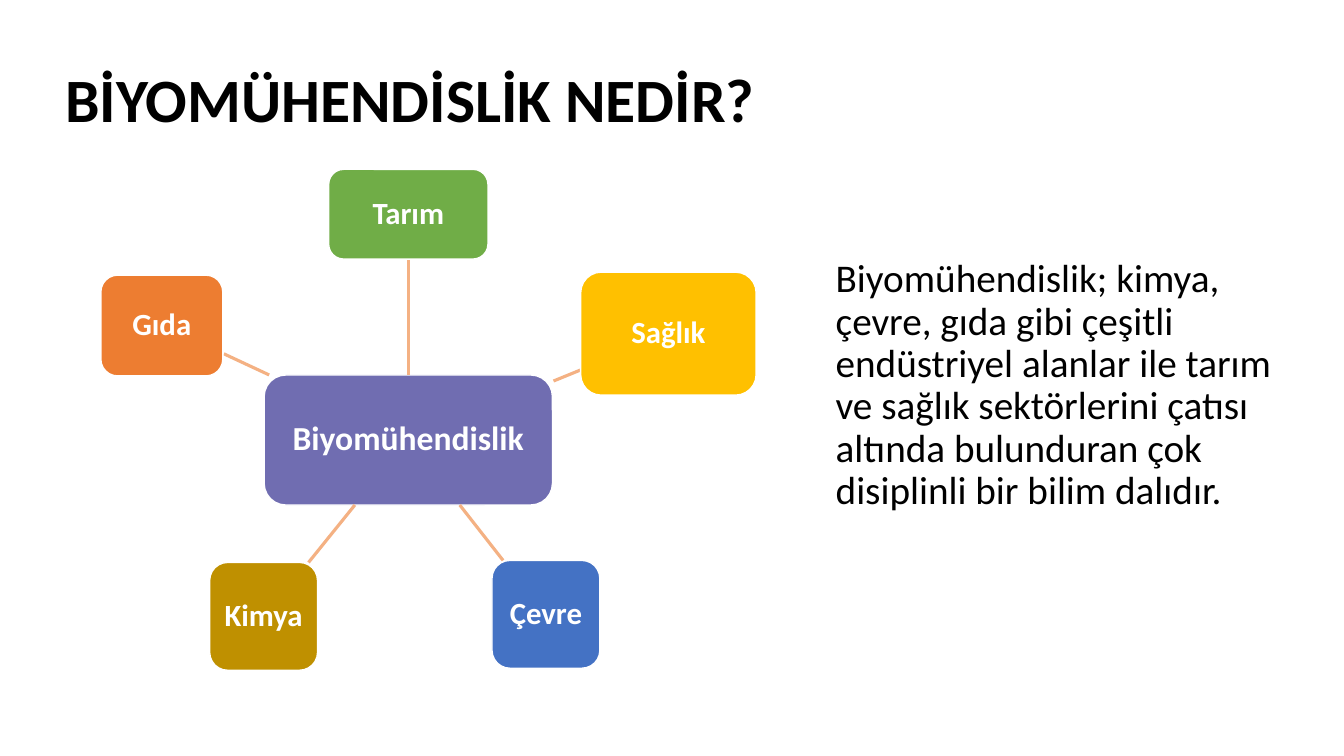
import pptx
import pptx.dml.color
import pptx.enum.shapes
import pptx.enum.text
import pptx.oxml.ns
import pptx.util
from lxml import etree

Inches = pptx.util.Inches
Pt = pptx.util.Pt


def color(hex_string):
    return pptx.dml.color.RGBColor.from_string(hex_string)


class Diagram:
    """Holds the style and the slide being drawn."""
    font = "Calibri"
    ink = "000000"
    paper = "FFFFFF"
    spoke_color = "F4B183"

    def __init__(self, slide):
        self.slide = slide

    def set_text(self, frame, text, size, ink, bold, align, anchor):
        frame.word_wrap = True
        frame.vertical_anchor = anchor
        paragraph = frame.paragraphs[0]
        paragraph.text = text
        paragraph.alignment = align
        paragraph.line_spacing = 0.9
        paragraph.font.name = self.font
        paragraph.font.size = Pt(size)
        paragraph.font.bold = bold
        paragraph.font.color.rgb = color(ink)

    def text(self, box, text, size, bold, anchor):
        frame = self.slide.shapes.add_textbox(*map(Inches, box)).text_frame
        self.set_text(frame, text, size, self.ink, bold,
                      pptx.enum.text.PP_ALIGN.LEFT, anchor)

    def node(self, box, text, size, fill):
        node = self.slide.shapes.add_shape(
            pptx.enum.shapes.MSO_SHAPE.ROUNDED_RECTANGLE, *map(Inches, box))
        node.shadow.inherit = False
        node.fill.solid()
        node.fill.fore_color.rgb = color(fill)
        node.line.color.rgb = color(self.paper)
        node.line.width = Pt(1)
        frame = node.text_frame
        frame.margin_left = frame.margin_right = Inches(0.06)
        frame.margin_top = frame.margin_bottom = Inches(0.06)
        self.set_text(frame, text, size, self.paper, True,
                      pptx.enum.text.PP_ALIGN.CENTER,
                      pptx.enum.text.MSO_ANCHOR.MIDDLE)

    def spoke(self, ends):
        spoke = self.slide.shapes.add_connector(
            pptx.enum.shapes.MSO_CONNECTOR.STRAIGHT, *map(Inches, ends))
        spoke.line.color.rgb = color(self.spoke_color)
        spoke.line.width = Pt(2.25)
        etree.SubElement(spoke._element.spPr,
                         pptx.oxml.ns.qn("a:effectLst"))


# field, box, fill, line from the hub to the field
FIELDS = [
    ("Tarım", (3.26, 1.68, 1.58, 0.89), "70AD47", (4.05, 3.72, 4.05, 2.58)),
    ("Sağlık", (5.76, 2.7, 1.74, 1.22), "FFC000", (5.49, 3.78, 5.76, 3.67)),
    ("Çevre", (4.88, 5.56, 1.07, 1.07), "4472C4", (4.56, 5.01, 4.99, 5.56)),
    ("Kimya", (2.08, 5.58, 1.07, 1.07), "BF9000", (3.52, 5.01, 3.06, 5.58)),
    ("Gıda", (1, 2.73, 1.21, 1), "ED7D31", (2.67, 3.72, 2.22, 3.51)),
]
DEFINITION = ("Biyomühendislik; kimya, çevre, gıda gibi çeşitli endüstriyel "
              "alanlar ile tarım ve sağlık sektörlerini çatısı altında "
              "bulunduran çok disiplinli bir bilim dalıdır.")


def main():
    deck = pptx.Presentation()
    deck.slide_width = Inches(13.33)
    deck.slide_height = Inches(7.5)
    diagram = Diagram(deck.slides.add_slide(deck.slide_layouts[6]))

    diagram.text((0.55, 0.49, 11.5, 1.06), "BİYOMÜHENDİSLİK NEDİR?", 44, True,
                 pptx.enum.text.MSO_ANCHOR.MIDDLE)
    diagram.node((2.62, 3.72, 2.86, 1.29), "Biyomühendislik", 24, "706DB1")
    for field, box, fill, ends in FIELDS:
        diagram.spoke(ends)
        diagram.node(box, field, 22, fill)
    diagram.text((8.19, 2.52, 4.59, 2.71), DEFINITION, 28, False,
                 pptx.enum.text.MSO_ANCHOR.TOP)
    deck.save("out.pptx")


if __name__ == "__main__":
    main()
